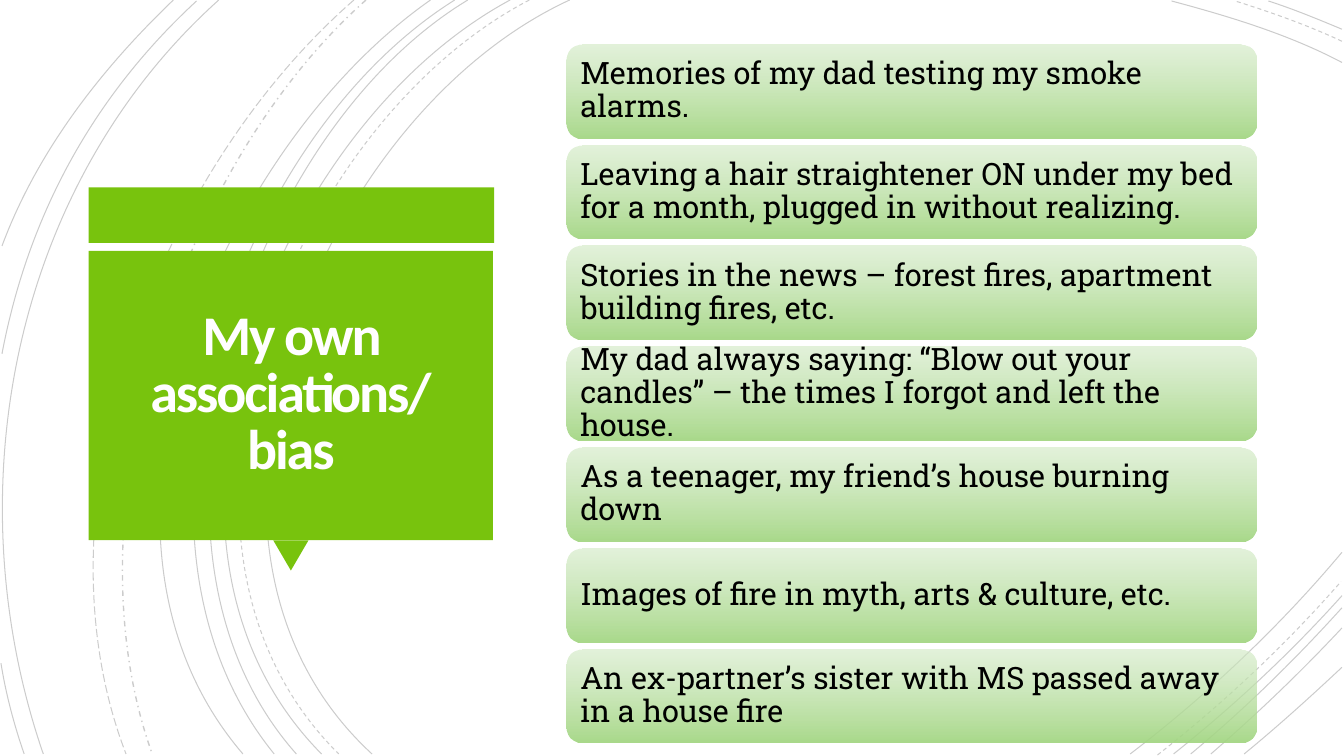
"""Build the slide on personal associations with fire."""
from lxml.etree import SubElement
from pptx import Presentation
from pptx.dml.color import RGBColor
from pptx.enum.dml import MSO_LINE
from pptx.enum.shapes import MSO_SHAPE
from pptx.enum.text import MSO_ANCHOR, PP_ALIGN
from pptx.oxml.ns import qn
from pptx.util import Pt

TITLE = ["My own associations/", "bias"]
NOTES = [
    "Memories of my dad testing my smoke alarms.",
    "Leaving a hair straightener ON under my bed for a month, plugged in without realizing.",
    "Stories in the news – forest fires, apartment building fires, etc.",
    "My dad always saying: “Blow out your candles” – the times I forgot and left the house.",
    "As a teenager, my friend’s house burning down",
    "Images of fire in myth, arts & culture, etc.",
    "An ex-partner’s sister with MS passed away in a house fire",
]
COLORS = {"line": "000000", "green": "78C30D", "title": "FFFEFF",
          "text": "000000", "top": "D0E9C2", "base": "A2D681"}
ARCS = [
    (MSO_LINE.SOLID, 0.75, [
        [(565, 0), (315, 115), (143, 540), (369, 748)],
        [(1331, 62), (1278, 34), (1218, 16), (1162, 1)],
        [(1121, 748), (1197, 690), (1269, 622), (1331, 548)],
        [(506, 0), (270, 127), (110, 537), (319, 748)],
        [(1331, 29), (1307, 19), (1283, 9), (1258, 1)],
        [(1164, 748), (1223, 701), (1280, 648), (1331, 591)],
        [(464, 0), (244, 133), (110, 541), (294, 748)],
        [(1181, 748), (1234, 704), (1284, 655), (1331, 603)],
        [(451, 0), (231, 138), (97, 533), (272, 748)],
        [(1201, 748), (1246, 709), (1290, 667), (1331, 623)],
        [(427, 0), (217, 147), (53, 529), (241, 748)],
        [(1234, 748), (1267, 721), (1299, 692), (1331, 662)],
        [(217, 0), (11, 185), (-46, 490), (43, 748)],
        [(195, 1), (92, 96), (28, 214), (2, 351)],
        [(1, 658), (6, 689), (14, 719), (24, 748)],
        [(172, 0), (100, 69), (37, 150), (2, 244)],
    ]),
    (MSO_LINE.DASH, 0.75, [
        [(525, 0), (285, 125), (123, 537), (336, 748)],
        [(1331, 41), (1297, 25), (1260, 12), (1225, 1)],
        [(1148, 749), (1213, 698), (1275, 640), (1330, 577)],
    ]),
    (MSO_LINE.DASH_DOT, 1, [[(363, 0), (176, 166), (65, 509), (151, 748)]]),
    (MSO_LINE.LONG_DASH, 0.75, [[(351, 0), (157, 169), (29, 499), (125, 748)]]),
]
PX = 9144


def rgb(name):
    return RGBColor.from_string(COLORS[name])


def fade(shape, *shares):
    tints = shape.element.spPr.iter(qn("a:srgbClr"))
    for tint, share in zip(tints, shares):
        SubElement(tint, qn("a:alpha")).set("val", str(share * 1000))


def bend(shape):
    route = next(shape.element.spPr.iter(qn("a:path")))
    legs = route.findall(qn("a:lnTo"))
    curve = SubElement(route, qn("a:cubicBezTo"))
    for leg in legs:
        curve.append(leg[0])
        route.remove(leg)


def add_arc(shapes, curve, dash, width):
    start, *rest = curve
    pen = shapes.build_freeform(*start, scale=PX)
    pen.add_line_segments(rest, close=False)
    arc = pen.convert_to_shape()
    bend(arc)
    arc.shadow.inherit = False
    arc.fill.background()
    arc.line.color.rgb = rgb("line")
    arc.line.width = Pt(width)
    arc.line.dash_style = dash
    fade(arc, 20)


def add_block(shapes, kind, *box):
    block = shapes.add_shape(kind, *(v * PX for v in box))
    block.shadow.inherit = False
    block.line.fill.background()
    block.fill.solid()
    block.fill.fore_color.rgb = rgb("green")
    return block


def write(shape, lines, font, size, color, inset, align, space):
    frame = shape.text_frame
    frame.word_wrap = True
    frame.vertical_anchor = MSO_ANCHOR.MIDDLE
    frame.margin_left = frame.margin_right = inset * PX
    frame.margin_top = frame.margin_bottom = inset * PX
    para = frame.paragraphs[0]
    para.alignment = align
    para.line_spacing = space
    for place, line in enumerate(lines):
        if place:
            para.add_line_break()
        run = para.add_run()
        run.text = line
        run.font.name = font
        run.font.size = Pt(size)
        run.font.color.rgb = rgb(color)
    return para.runs


def add_title(shapes):
    add_block(shapes, MSO_SHAPE.RECTANGLE, 88, 186, 402, 55)
    tip = add_block(shapes, MSO_SHAPE.ISOSCELES_TRIANGLE, 271, 536, 35, 30)
    tip.rotation = 180
    panel = add_block(shapes, MSO_SHAPE.RECTANGLE, 88, 249, 401, 287)
    for run in write(panel, TITLE, "Calibri", 40, "title", 34, PP_ALIGN.CENTER, 0.85):
        run.font.bold = True
        run.font._element.set("spc", "-150")


def add_notes(shapes):
    left, top, wide, high, pitch = 562, 44, 684, 93, 100
    for row, note in enumerate(NOTES):
        card = add_block(shapes, MSO_SHAPE.ROUNDED_RECTANGLE,
                         left, top + row * pitch, wide, high)
        card.fill.gradient()
        card.fill.gradient_angle = 270
        for stop, name in zip(card.fill.gradient_stops, ("top", "base")):
            stop.color.rgb = rgb(name)
        fade(card, 60, 92)
        write(card, [note], "Roboto Slab", 22, "text", 9, PP_ALIGN.LEFT, 0.9)


def main():
    deck = Presentation()
    deck.slide_width, deck.slide_height = 1333 * PX, 750 * PX
    shapes = deck.slides.add_slide(deck.slide_layouts[6]).shapes
    for dash, width, curves in ARCS:
        for curve in curves:
            add_arc(shapes, curve, dash, width)
    add_title(shapes)
    add_notes(shapes)
    deck.save("out.pptx")


if __name__ == "__main__":
    main()
